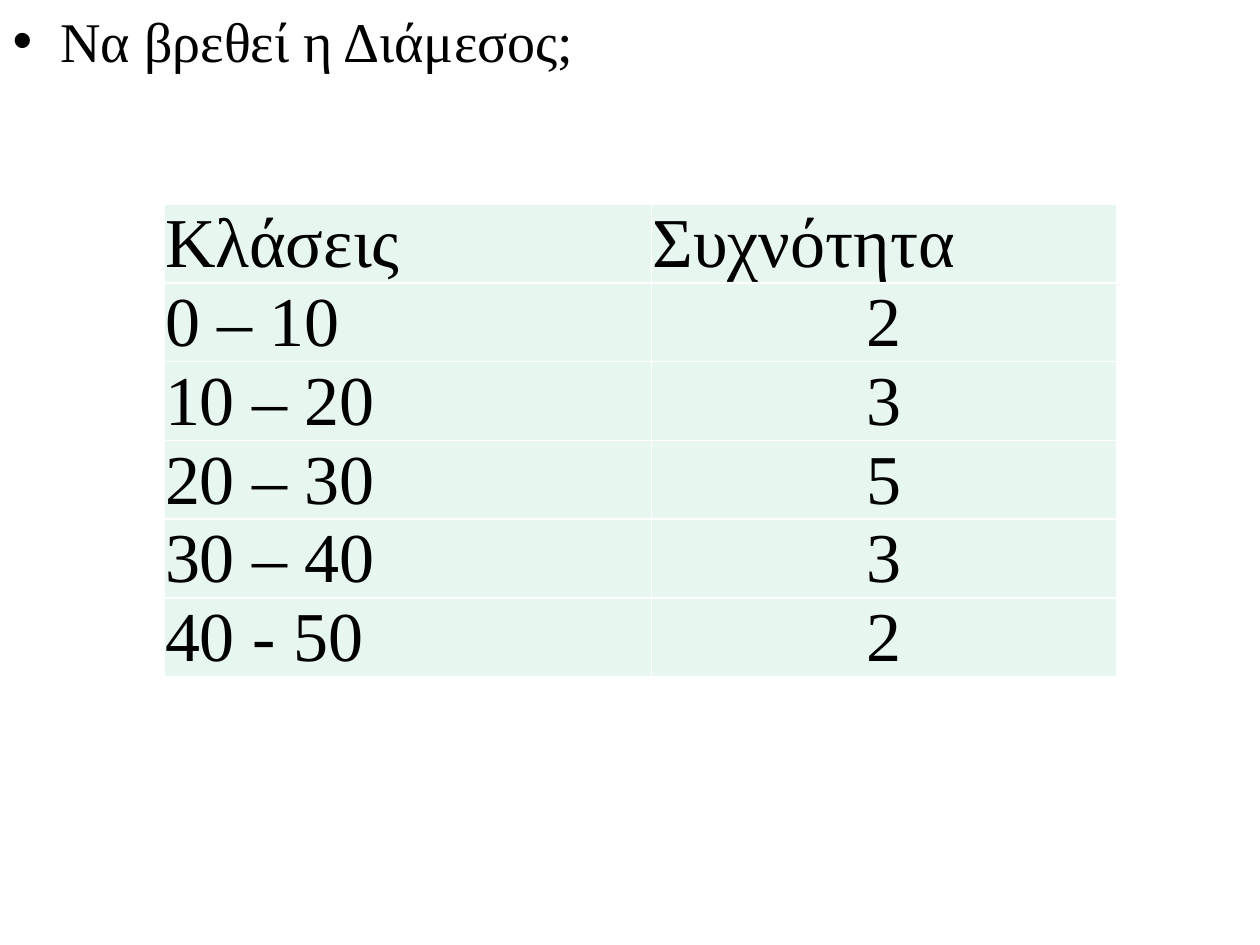
from lxml import etree
from pptx import Presentation
from pptx.dml.color import RGBColor
from pptx.enum.text import MSO_ANCHOR, PP_ALIGN
from pptx.oxml.ns import qn
from pptx.util import Inches, Pt

MIDDLE, TOP = MSO_ANCHOR.MIDDLE, MSO_ANCHOR.TOP
LEFT, CENTER = PP_ALIGN.LEFT, PP_ALIGN.CENTER

BLACK = RGBColor(0x00, 0x00, 0x00)
WHITE = RGBColor(0xFF, 0xFF, 0xFF)
MINT = RGBColor(0xE7, 0xF6, 0xEF)
FONT = "Times New Roman"

FREQUENCIES = [
    ("Κλάσεις", "Συχνότητα"),
    ("0 – 10", "2"),
    ("10 – 20", "3"),
    ("20 – 30", "5"),
    ("30 – 40", "3"),
    ("40 - 50", "2"),
]
COLUMN_WIDTHS = (3.87, 3.69)
ROW_HEIGHT = 0.57


def format_runs(para, size):
    for span in para.runs:
        span.font.name = FONT
        span.font.size = Pt(size)
        span.font.color.rgb = BLACK


def add_question(page, text):
    """Fill the body placeholder with one bulleted question."""
    box = page.placeholders[1]
    box.left, box.top = Inches(0), Inches(0)
    box.width, box.height = Inches(10), Inches(0.76)
    box.text_frame.text = text
    box.text_frame.vertical_anchor = TOP
    para = box.text_frame.paragraphs[0]
    format_runs(para, 32)

    # Hanging bullet
    properties = para._p.get_or_add_pPr()
    properties.set("marL", str(Inches(0.38)))
    properties.set("indent", str(-Inches(0.38)))
    etree.SubElement(properties, qn("a:buChar"), char="•")


def add_borders(cell):
    """Draw thin white lines on all four sides; they precede the fill."""
    properties = cell._tc.get_or_add_tcPr()
    for position, side in enumerate(("lnL", "lnR", "lnT", "lnB")):
        line = etree.Element(qn(f"a:{side}"), w=str(Pt(1)))
        fill = etree.SubElement(line, qn("a:solidFill"))
        etree.SubElement(fill, qn("a:srgbClr"), val=str(WHITE))
        properties.insert(position, line)


def format_cell(cell, text, alignment):
    cell.text_frame.text = text
    cell.vertical_anchor = MIDDLE
    cell.margin_left = cell.margin_right = cell.margin_top = Inches(0.01)
    cell.margin_bottom = 0
    cell.fill.solid()
    cell.fill.fore_color.rgb = MINT
    para = cell.text_frame.paragraphs[0]
    para.alignment = alignment
    format_runs(para, 40)
    add_borders(cell)


def add_frequency_table(page):
    frame = page.shapes.add_table(
        len(FREQUENCIES), len(COLUMN_WIDTHS), Inches(1.3), Inches(1.62),
        Inches(sum(COLUMN_WIDTHS)), Inches(ROW_HEIGHT * len(FREQUENCIES)))
    table = frame.table
    table.first_row = table.horz_banding = False
    for column, width in zip(table.columns, COLUMN_WIDTHS):
        column.width = Inches(width)
    for row, values in enumerate(FREQUENCIES):
        table.rows[row].height = Inches(ROW_HEIGHT)
        for column, text in enumerate(values):
            # Only the counts below the heading are centred
            alignment = CENTER if row and column else LEFT
            format_cell(table.cell(row, column), text, alignment)


def main():
    deck = Presentation()
    deck.slide_width, deck.slide_height = Inches(10), Inches(7.5)
    page = deck.slides.add_slide(deck.slide_layouts[1])
    page.background.fill.solid()
    page.background.fill.fore_color.rgb = WHITE

    # This page has no title
    title = page.shapes.title.element
    title.getparent().remove(title)

    add_question(page, "Να βρεθεί η Διάμεσος;")
    add_frequency_table(page)
    deck.save("out.pptx")


if __name__ == "__main__":
    main()
